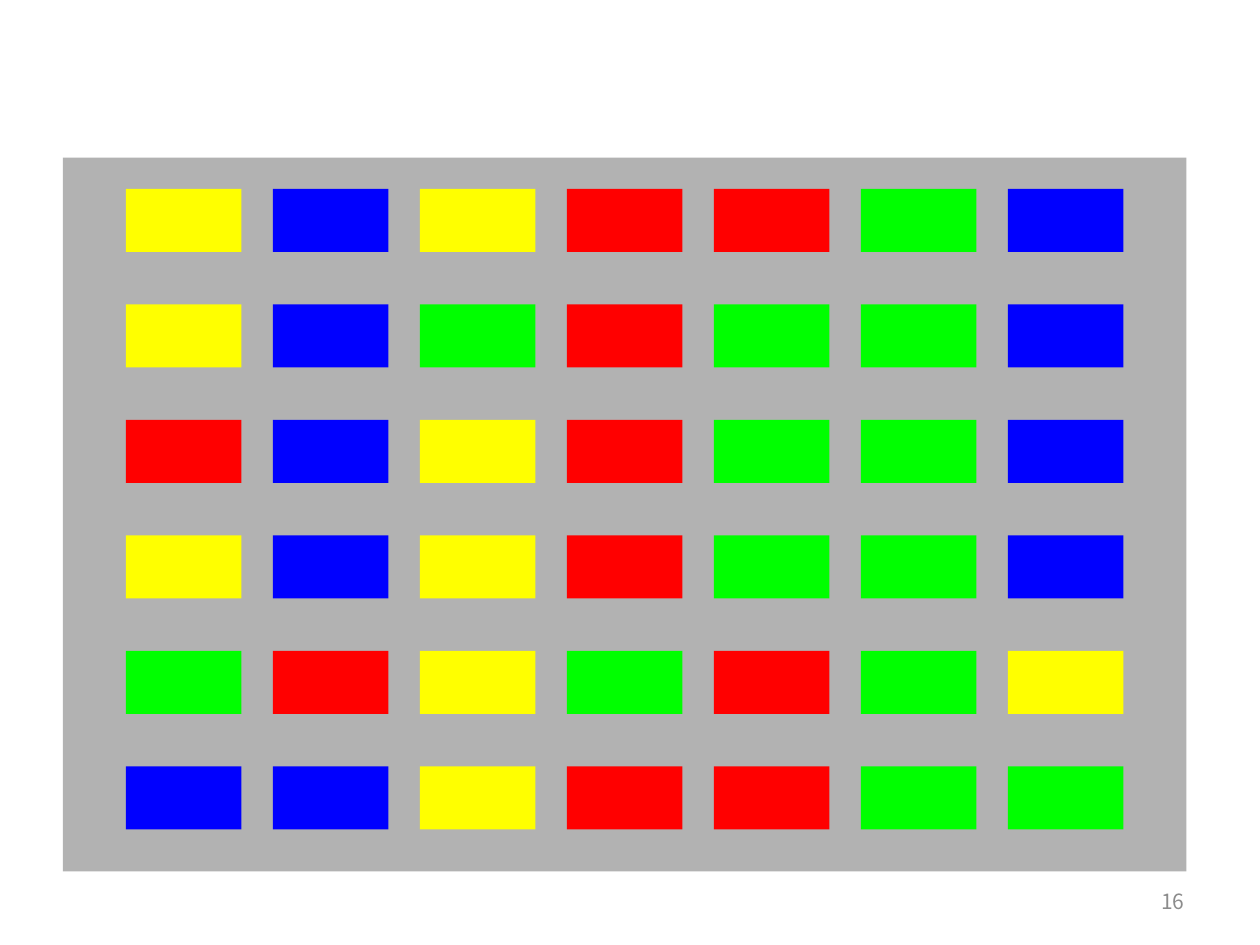
from dataclasses import dataclass

from pptx import Presentation
from pptx.dml.color import RGBColor as RGB
from pptx.enum.shapes import MSO_SHAPE as Shape
from pptx.enum.text import MSO_ANCHOR as Anchor, PP_ALIGN as Align
from pptx.util import Pt


@dataclass(frozen=True)
class Theme:
    font: str = "Noto Sans CJK KR"
    number_size: int = 12
    number: str = "8C8C8C"
    panel: str = "B2B2B2"
    yellow: str = "FFFF00"
    red: str = "FF0000"
    blue: str = "0000FF"
    green: str = "00FF00"


class SlideBuilder:
    def __init__(self, slide, theme):
        self.slide = slide
        self.theme = theme

    def block(self, left, top, width, height, color):
        block = self.slide.shapes.add_shape(
            Shape.RECTANGLE, Pt(left), Pt(top), Pt(width), Pt(height))
        block.shadow.inherit = False
        block.fill.solid()
        block.fill.fore_color.rgb = RGB.from_string(color)
        block.line.fill.background()

    def color_grid(self, left, top, width, height, column_gap, row_gap, rows):
        """Draw one block per letter: Y, R, B or G."""
        theme = self.theme
        colors = {"Y": theme.yellow, "R": theme.red,
                  "B": theme.blue, "G": theme.green}
        for row, letters in enumerate(rows):
            for column, letter in enumerate(letters):
                self.block(left + column * (width + column_gap),
                           top + row * (height + row_gap),
                           width, height, colors[letter])

    def page_number(self, number, left, top, width, height):
        box = self.slide.shapes.add_textbox(
            Pt(left), Pt(top), Pt(width), Pt(height))
        frame = box.text_frame
        frame.word_wrap = True
        frame.vertical_anchor = Anchor.MIDDLE
        line = frame.paragraphs[0]
        line.text = str(number)
        line.alignment = Align.RIGHT
        line.font.name = self.theme.font
        line.font.size = Pt(self.theme.number_size)
        line.font.color.rgb = RGB.from_string(self.theme.number)


COLOR_ROWS = (
    "YBYRRGB",
    "YBGRGGB",
    "RBYRGGB",
    "YBYRGGB",
    "GRYGRGY",
    "BBYRRGG",
)


def main():
    deck = Presentation()
    deck.slide_width, deck.slide_height = Pt(720), Pt(540)
    blank_layout = deck.slide_layouts[6]
    theme = Theme()
    builder = SlideBuilder(deck.slides.add_slide(blank_layout), theme)

    builder.page_number(16, 516, 500.5, 168, 28.8)
    builder.block(36, 90, 642, 408, theme.panel)
    builder.color_grid(72, 108, 66, 36, column_gap=18, row_gap=30,
                       rows=COLOR_ROWS)
    deck.save("out.pptx")


if __name__ == "__main__":
    main()
